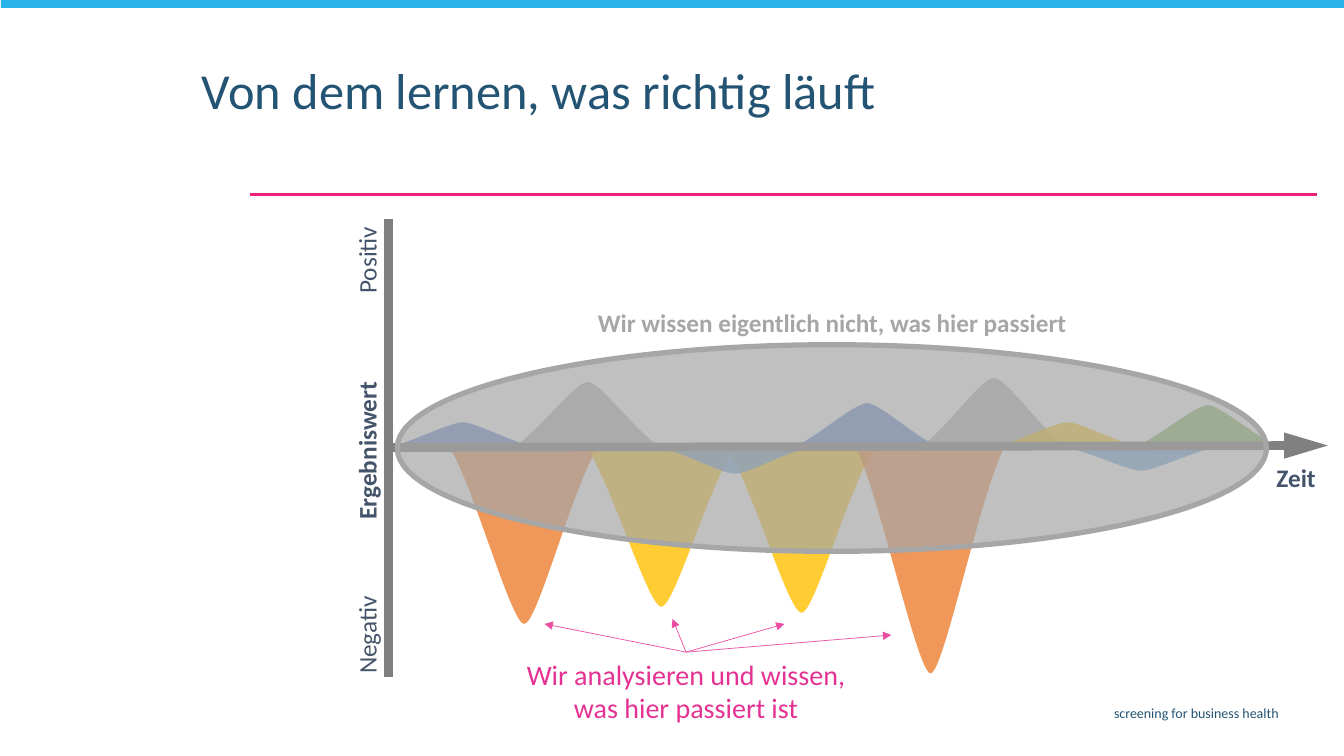
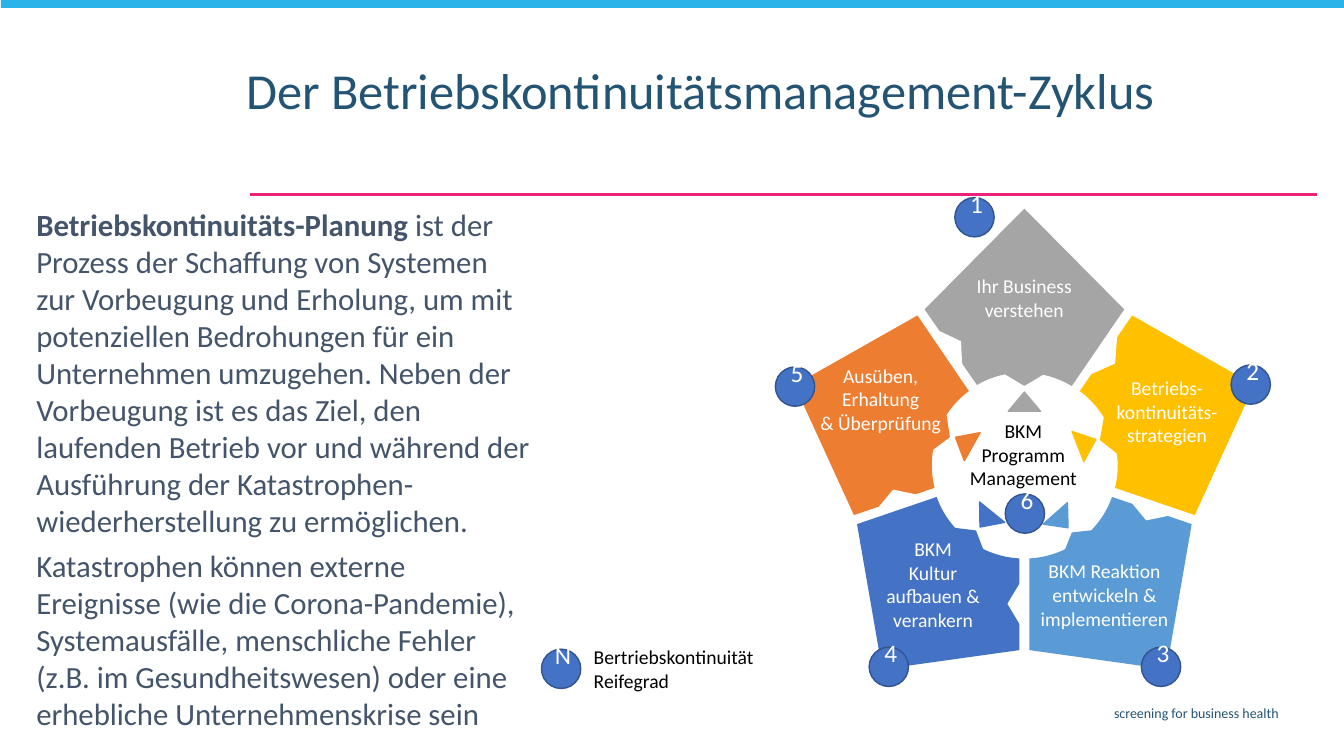
"""Builds two slides on business continuity: learning from what goes right, and the management cycle."""
import math

import lxml.etree
import pptx
import pptx.dml.color
import pptx.enum.shapes
import pptx.enum.text
import pptx.oxml.ns
import pptx.util

Inches = pptx.util.Inches
Pt = pptx.util.Pt
qn = pptx.oxml.ns.qn
rgb = pptx.dml.color.RGBColor.from_string
Align = pptx.enum.text.PP_ALIGN
Anchor = pptx.enum.text.MSO_ANCHOR
Shape = pptx.enum.shapes.MSO_SHAPE
STRAIGHT = pptx.enum.shapes.MSO_CONNECTOR.STRAIGHT


class Theme:
    font = "Calibri"
    title, text, black, white = "245473", "44546A", "000000", "FFFFFF"
    band, rule, pink, arrow = "29B3E8", "EC2179", "E53292", "E94EA1"
    axis, veil, badge_edge = "808080", "A6A6A6", "325491"
    blue, orange, grey = "4472C4", "ED7D31", "A5A5A5"
    yellow, sky, green = "FFC000", "5B9BD5", "70AD47"
    title_size, body_size, note_size = 36, 22, 20
    axis_size, label_size, footer_size = 18, 14, 10


def paint(shape, fill=None, line=None, width=1, alpha=None, arrow=None):
    properties = shape.element.spPr
    if fill:
        shape.fill.solid()
        shape.fill.fore_color.rgb = rgb(fill)
    if alpha:
        lxml.etree.SubElement(properties.find(qn("a:solidFill"))[0], qn("a:alpha"), val=str(alpha * 1000))
    if line:
        shape.line.color.rgb = rgb(line)
        shape.line.width = Pt(width)
    else:
        shape.line.fill.background()
    if arrow:
        lxml.etree.SubElement(properties.find(qn("a:ln")), qn("a:tailEnd"), type="triangle", len=arrow)
    lxml.etree.SubElement(properties, qn("a:effectLst"))


def write(paragraph, text, size, color, bold=False, align=Align.CENTER):
    paragraph.alignment = align
    for number, line in enumerate(text.split("\n")):
        if number:
            paragraph.add_line_break()
        run = paragraph.add_run()
        run.text = line
        run.font.name = Theme.font
        run.font.size = Pt(size)
        run.font.bold = bold
        run.font.color.rgb = rgb(color)


prs = pptx.Presentation()
prs.slide_width, prs.slide_height = Inches(13.33), Inches(7.5)
lessons = prs.slides.add_slide(prs.slide_layouts[5])
cycle = prs.slides.add_slide(prs.slide_layouts[1])

rule = lessons.shapes.add_connector(STRAIGHT, Inches(13.06), Inches(1.93), Inches(2.48), Inches(1.93))
paint(rule, line=Theme.rule, width=1.5)
band = lessons.shapes.add_shape(Shape.RECTANGLE, Inches(0.01), Inches(-0.02), Inches(13.34), Inches(0.1))
paint(band, Theme.band)
footer = lessons.shapes.add_textbox(Inches(3.65), Inches(6.94), Inches(9.13), Inches(0.29))
footer.text_frame.word_wrap = True
write(footer.text_frame.paragraphs[0], "screening for business health", Theme.footer_size, Theme.title,
      align=Align.RIGHT)
for shared in (rule, band, footer):
    prs.slide_master.shapes.element.append(shared.element)

for slide, left, heading in (
    (lessons, 1.9, "Von dem lernen, was richtig läuft"),
    (cycle, 2.34, "Der Betriebskontinuitätsmanagement-Zyklus"),
):
    title = slide.shapes.title
    title.left, title.top, title.width, title.height = map(Inches, (left, 0.6, 9.68, 0.76))
    title.text_frame.auto_size = pptx.enum.text.MSO_AUTO_SIZE.NONE
    title.text_frame.vertical_anchor = Anchor.TOP
    title.text_frame.paragraphs[0].line_spacing = 0.9
    write(title.text_frame.paragraphs[0], heading, Theme.title_size, Theme.title, align=Align.LEFT)

outlines = []
baseline = 4.44
for start, depth, color in (
    (7.21, 1.64, Theme.yellow),
    (3.85, -0.25, Theme.blue),
    (4.46, 1.75, Theme.orange),
    (5.09, -0.65, Theme.grey),
    (5.82, 1.58, Theme.yellow),
    (6.55, 0.26, Theme.sky),
    (7.86, -0.44, Theme.blue),
    (8.49, 2.24, Theme.orange),
    (9.12, -0.69, Theme.grey),
    (9.85, -0.25, Theme.yellow),
    (10.58, 0.23, Theme.sky),
    (11.24, -0.42, Theme.green),
):
    wave = ((0, 0), (0.24, 0.22), (0.61, 1), (0.74, 1), (0.87, 1), (1.22, 0.22), (1.47, 0))
    outlines.append((lessons, color, 80, 0, [(start + x, baseline + depth * y) for x, y in wave]))

hub_x, hub_y = 10.16, 4.62
for color, corners in (
    (Theme.grey, ((9.69, 3.82), (9.17, 3.07), (10.16, 2.07), (11.15, 3.07), (10.63, 3.83))),
    (Theme.orange, ((9.27, 4.84), (8.47, 5.11), (7.88, 3.82), (9.1, 3.13), (9.61, 3.88))),
    (Theme.yellow, ((10.71, 3.88), (11.23, 3.13), (12.44, 3.82), (11.85, 5.11), (11.06, 4.84))),
    (Theme.sky, ((11.03, 4.93), (11.82, 5.2), (11.57, 6.64), (10.21, 6.45), (10.21, 5.54))),
    (Theme.blue, ((10.11, 5.54), (10.11, 6.45), (8.75, 6.64), (8.5, 5.2), (9.29, 4.93))),
):
    (first_x, first_y), (last_x, last_y) = corners[0], corners[-1]
    sweep = math.remainder(
        math.atan2(first_y - hub_y, first_x - hub_x) - math.atan2(last_y - hub_y, last_x - hub_x), math.tau)
    pull = 4 / 3 * math.tan(sweep / 4)
    arc = [
        (last_x - pull * (last_y - hub_y), last_y + pull * (last_x - hub_x)),
        (first_x + pull * (first_y - hub_y), first_y - pull * (first_x - hub_x)),
        corners[0],
    ]
    outlines.append((cycle, color, None, 4, [*corners, *arc]))

for slide, color, alpha, straight, points in outlines:
    start, *others = [(Inches(x), Inches(y)) for x, y in points]
    builder = slide.shapes.build_freeform(*start)
    builder.add_line_segments(others)
    outline = builder.convert_to_shape()
    segments = list(outline.element.spPr.iter(qn("a:lnTo")))[straight:]
    for index in range(0, len(segments), 3):
        bend = lxml.etree.Element(qn("a:cubicBezTo"))
        segments[index].addprevious(bend)
        for segment in segments[index:index + 3]:
            bend.append(segment[0])
            segment.getparent().remove(segment)
    paint(outline, color, alpha=alpha)

for ends, head in (((3.85, 4.44, 13.17, 4.42), "lg"), ((3.85, 2.17, 3.85, 6.72), None)):
    axis = lessons.shapes.add_connector(STRAIGHT, *map(Inches, ends))
    paint(axis, line=Theme.axis, width=6.25, arrow=head)

veil = lessons.shapes.add_shape(Shape.OVAL, Inches(3.94), Inches(3.42), Inches(8.62), Inches(2.05))
paint(veil, Theme.veil, Theme.veil, 3.75, alpha=70)

for text, left, top, width, turn, size, color, bold, anchor in (
    ("Ergebniswert", 2.71, 4.27, 1.85, 270, Theme.axis_size, Theme.text, True, Anchor.BOTTOM),
    ("Zeit", 11.93, 4.54, 1.85, 0, Theme.axis_size, Theme.text, True, Anchor.BOTTOM),
    ("Positiv", 2.71, 2.38, 1.85, 270, Theme.axis_size, Theme.text, False, Anchor.BOTTOM),
    ("Negativ", 2.71, 6.1, 1.85, 270, Theme.axis_size, Theme.text, False, Anchor.BOTTOM),
    ("Wir wissen eigentlich nicht, was hier passiert", 5.78, 3, 4.95, 0,
     Theme.axis_size, Theme.veil, True, Anchor.BOTTOM),
    ("Wir analysieren und wissen, was hier passiert ist", 4.94, 6.47, 3.73, 0,
     Theme.note_size, Theme.pink, False, Anchor.TOP),
):
    caption = lessons.shapes.add_textbox(Inches(left), Inches(top), Inches(width), Inches(0.4))
    caption.rotation = turn
    caption.text_frame.word_wrap = True
    caption.text_frame.vertical_anchor = anchor
    write(caption.text_frame.paragraphs[0], text, size, color, bold)

analysis = caption
for x, y in ((5.4, 6.19), (6.67, 6.14), (7.78, 6.19), (8.84, 6.3)):
    pointer = lessons.shapes.add_connector(STRAIGHT, Inches(6.81), Inches(6.47), Inches(x), Inches(y))
    pointer.begin_connect(analysis, 0)
    paint(pointer, line=Theme.arrow, width=0.5, arrow="med")

planning = cycle.placeholders[1]
planning.left, planning.top, planning.width, planning.height = map(Inches, (0.27, 2, 5.08, 5.36))
body = planning.text_frame
body.auto_size = pptx.enum.text.MSO_AUTO_SIZE.NONE
body.margin_left = body.margin_right = Inches(0.09)
body.margin_top = body.margin_bottom = Inches(0.04)
for number, runs in enumerate((
    (
        ("Betriebskontinuitäts-Planung ", True),
        ("ist der Prozess der Schaffung von Systemen zur Vorbeugung und Erholung, um mit potenziellen "
         "Bedrohungen für ein Unternehmen umzugehen. Neben der Vorbeugung ist es das Ziel, den laufenden "
         "Betrieb vor und während der Ausführung der Katastrophen-wiederherstellung zu ermöglichen.", False),
    ),
    (
        ("Katastrophen können externe Ereignisse (wie die Corona-Pandemie), Systemausfälle, menschliche "
         "Fehler (z.B. im Gesundheitswesen) oder eine erhebliche Unternehmenskrise sein", False),
    ),
)):
    paragraph = body.add_paragraph() if number else body.paragraphs[0]
    paragraph.space_before = Pt(6 * number)
    indent = paragraph._p.get_or_add_pPr()
    indent.set("marL", "0")
    indent.set("indent", "0")
    lxml.etree.SubElement(indent, qn("a:buNone"))
    for text, bold in runs:
        write(paragraph, text, Theme.body_size, Theme.text, bold, Align.LEFT)

large, small = (0.6, 0.18), (0.32, 0.19)
for left, top, size, turn, color in (
    (9.03, 4.21, large, 112.4, Theme.orange),
    (9.32, 5.25, large, 38, Theme.blue),
    (10.39, 5.27, large, 322.7, Theme.sky),
    (10.7, 4.24, large, 249.2, Theme.yellow),
    (9.86, 3.64, large, 180, Theme.grey),
    (9.15, 3.35, large, 56.3, Theme.white),
    (10.68, 3.46, large, 125.2, Theme.white),
    (11.1, 4.98, large, 199.3, Theme.white),
    (9.79, 5.9, large, 270, Theme.white),
    (8.59, 4.86, large, 340.7, Theme.white),
    (9.4, 4.29, small, 299.2, Theme.orange),
    (10, 3.89, small, 0, Theme.grey),
    (10.62, 4.3, small, 68.6, Theme.yellow),
    (10.37, 5.07, small, 138.5, Theme.sky),
    (9.62, 5.06, small, 219.1, Theme.blue),
):
    notch = cycle.shapes.add_shape(Shape.ISOSCELES_TRIANGLE, *map(Inches, (left, top, *size)))
    notch.rotation = turn
    paint(notch, color, color)

for lines, box, color, wrap, align in (
    (["BKM\nProgramm\nManagement"], (9.49, 4.11, 1.32, 0.81), Theme.black, False, Align.CENTER),
    (["Ihr Business", "verstehen"], (9.58, 2.67, 1.16, 0.57), Theme.white, False, Align.CENTER),
    (["Betriebs-\nkontinuitäts-\nstrategien"], (10.97, 3.68, 1.21, 0.81), Theme.white, False, Align.CENTER),
    (["BKM Reaktion entwickeln & implementieren"], (10.21, 5.5, 1.49, 0.81), Theme.white, True, Align.CENTER),
    (["BKM\nKultur aufbauen & verankern"], (8.63, 5.28, 1.25, 1.04), Theme.white, True, Align.CENTER),
    (["Ausüben,\nErhaltung\n& Überprüfung"], (8.03, 3.56, 1.41, 0.81), Theme.white, False, Align.CENTER),
    (["Bertriebskontinuität\nReifegrad"], (5.79, 6.35, 1.81, 0.57), Theme.black, False, Align.LEFT),
):
    label = cycle.shapes.add_textbox(*map(Inches, box))
    label.text_frame.word_wrap = wrap
    for number, text in enumerate(lines):
        paragraph = label.text_frame.add_paragraph() if number else label.text_frame.paragraphs[0]
        write(paragraph, text, Theme.label_size, color, align=align)

for mark, left, top in (
    ("1", 9.47, 1.96), ("2", 12.21, 3.62), ("3", 11.32, 6.42), ("4", 8.62, 6.42),
    ("5", 7.69, 3.64), ("6", 9.97, 4.9), ("N", 5.37, 6.44),
):
    badge = cycle.shapes.add_shape(Shape.OVAL, Inches(left), Inches(top), Inches(0.39), Inches(0.39))
    paint(badge, Theme.blue, Theme.badge_edge)
    frame = badge.text_frame
    frame.word_wrap = False
    frame.vertical_anchor = Anchor.MIDDLE
    frame.margin_left, frame.margin_top = Inches(0.04), 0
    frame.margin_right, frame.margin_bottom = 0, Inches(0.28)
    write(frame.paragraphs[0], mark, Theme.axis_size, Theme.white)

prs.save("out.pptx")
